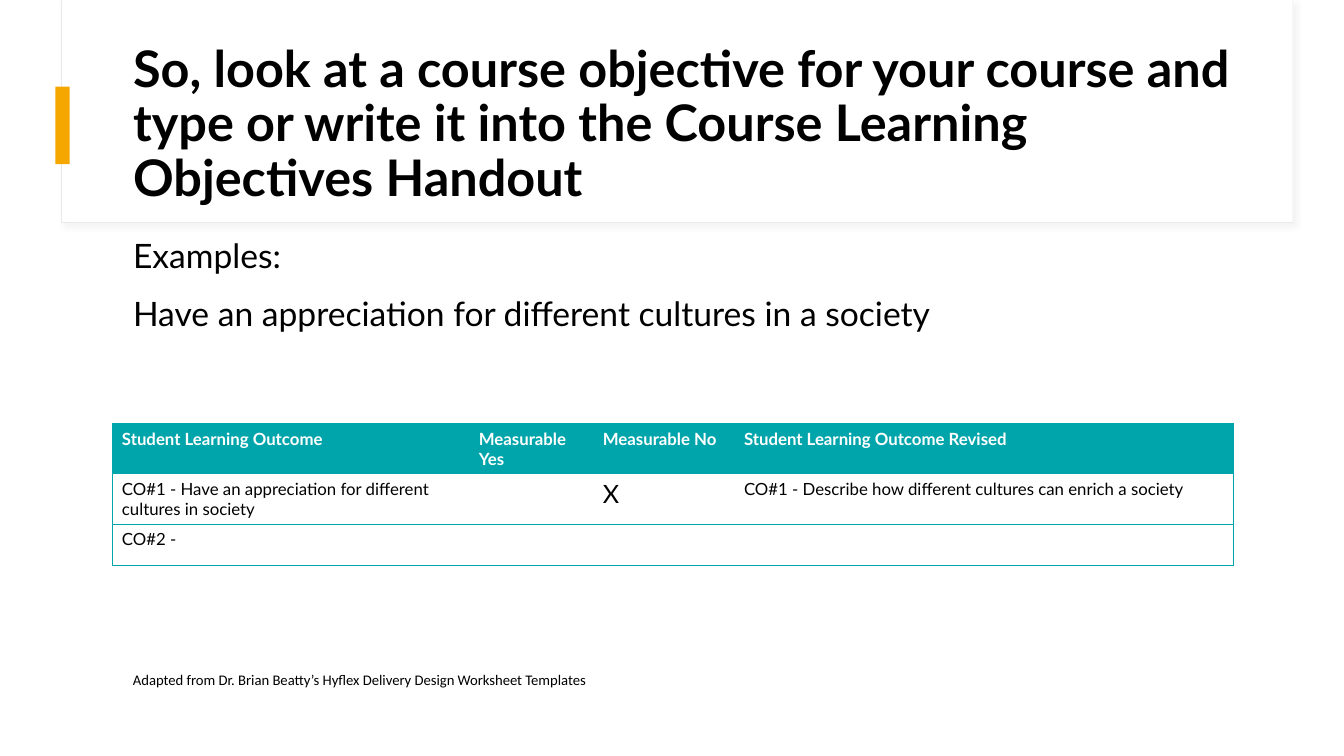
from lxml import etree
from pptx import Presentation
from pptx.dml.color import RGBColor
from pptx.enum.shapes import MSO_SHAPE
from pptx.enum.text import MSO_ANCHOR, MSO_AUTO_SIZE, PP_ALIGN
from pptx.oxml import parse_xml
from pptx.oxml.ns import nsdecls, qn
from pptx.util import Inches, Pt

RECTANGLE = MSO_SHAPE.RECTANGLE
MIDDLE, TOP = MSO_ANCHOR.MIDDLE, MSO_ANCHOR.TOP
LEFT = PP_ALIGN.LEFT
NO_AUTOFIT = MSO_AUTO_SIZE.NONE

BLACK, WHITE, TEAL, AMBER, GREY = "000000", "FFFFFF", "00A5AB", "F5A700", "E9E9E9"

HEADING = ("So, look at a course objective for your course and type or write it "
           "into the Course Learning Objectives Handout")
EXAMPLES = ["Examples:", "Have an appreciation for different cultures in a society"]
OUTCOMES = [
    ["Student Learning Outcome", "Measurable Yes", "Measurable No",
     "Student Learning Outcome Revised"],
    ["CO#1 - Have an appreciation for different cultures in society", "", "X",
     "CO#1 - Describe how different cultures can enrich a society"],
    ["CO#2 -", "", "", ""],
]
COLUMN_WIDTHS = [3.54, 1.23, 1.4, 4.95]
ROW_HEIGHTS = [0.5, 0.5, 0.41]
CREDIT = "Adapted from Dr. Brian Beatty’s Hyflex Delivery Design Worksheet Templates"


def rgb(value):
    return RGBColor.from_string(value)


def box(left, top, width, height):
    return [Inches(v) for v in (left, top, width, height)]


def place(shape, *area):
    shape.left, shape.top, shape.width, shape.height = box(*area)


def style(paragraph, size, font="Lato", color=BLACK, bold=False):
    paragraph.alignment = LEFT
    for run in paragraph.runs:
        run.font.name = font
        run.font.size = Pt(size)
        run.font.bold = bold
        run.font.color.rgb = rgb(color)


def add_panel(slide, area, fill, line=None):
    panel = slide.shapes.add_shape(RECTANGLE, *box(*area))
    panel.shadow.inherit = False
    panel.fill.solid()
    panel.fill.fore_color.rgb = rgb(fill)
    if line:
        panel.line.color.rgb = rgb(line)
        panel.line.width = Pt(0.75)
    else:
        panel.line.fill.background()
    return panel


def add_soft_shadow(shape):
    effects = shape.element.spPr.find(qn("a:effectLst"))
    effects.append(parse_xml(
        f'<a:outerShdw {nsdecls("a")} blurRad="{Pt(4)}" dist="{Pt(3)}" dir="2700000" '
        'algn="tl" rotWithShape="0"><a:srgbClr val="D9D9D9"><a:alpha val="30000"/>'
        '</a:srgbClr></a:outerShdw>'))


def set_borders(cell, visible):
    properties = cell._tc.get_or_add_tcPr()
    for position, side in enumerate("LRTB"):
        border = etree.Element(qn(f"a:ln{side}"), w=str(Pt(0.5)))
        if side in visible:
            fill = etree.SubElement(border, qn("a:solidFill"))
            etree.SubElement(fill, qn("a:srgbClr"), val=TEAL)
        else:
            etree.SubElement(border, qn("a:noFill"))
        properties.insert(position, border)


def add_outcomes(slide):
    area = box(1.11, 4.2, sum(COLUMN_WIDTHS), sum(ROW_HEIGHTS))
    table = slide.shapes.add_table(len(OUTCOMES), len(COLUMN_WIDTHS), *area).table
    table.first_row = table.horz_banding = False
    for column, width in zip(table.columns, COLUMN_WIDTHS):
        column.width = Inches(width)
    for row, height in zip(table.rows, ROW_HEIGHTS):
        row.height = Inches(height)
    last = len(COLUMN_WIDTHS) - 1
    for r, texts in enumerate(OUTCOMES):
        header = r == 0
        for c, text in enumerate(texts):
            cell = table.cell(r, c)
            if header:
                cell.fill.solid()
                cell.fill.fore_color.rgb = rgb(TEAL)
            else:
                cell.fill.background()
            set_borders(cell, "TB" + ("L" if c == 0 else "R" if c == last else ""))
            cell.text_frame.text = text
            style(cell.text_frame.paragraphs[0], 18 if text == "X" else 12,
                  color=WHITE if header else BLACK, bold=header)


def main():
    deck = Presentation()
    deck.slide_width, deck.slide_height = Inches(13.33), Inches(7.5)
    slide = deck.slides.add_slide(deck.slide_layouts[1])
    heading, examples = slide.shapes.title, slide.placeholders[1]

    add_soft_shadow(add_panel(slide, (0.61, 0, 12.21, 2.21), WHITE, GREY))
    add_panel(slide, (0.62, 0, 12.2, 2.2), WHITE)
    add_panel(slide, (0.55, 0.86, 0.14, 0.77), AMBER)
    for placeholder in (heading, examples):
        placeholder.element.getparent().append(placeholder.element)

    place(heading, 1.22, 0.6, 11.12, 1.29)
    heading.text_frame.text = HEADING
    heading.text_frame.auto_size = NO_AUTOFIT
    heading.text_frame.vertical_anchor = MIDDLE
    heading_line = heading.text_frame.paragraphs[0]
    heading_line.line_spacing = 0.9
    style(heading_line, 36, bold=True)

    place(examples, 1.22, 2.24, 11.12, 4.51)
    examples.text_frame.text = "\n".join(EXAMPLES)
    examples.text_frame.auto_size = NO_AUTOFIT
    examples.text_frame.vertical_anchor = TOP
    for paragraph in examples.text_frame.paragraphs:
        paragraph.line_spacing = 1.1
        paragraph.space_before = Pt(10)
        style(paragraph, 24)
        properties = paragraph._p.get_or_add_pPr()
        properties.set("marL", "0")
        properties.set("indent", "0")
        etree.SubElement(properties, qn("a:buNone"))

    add_outcomes(slide)

    credit = slide.shapes.add_textbox(*box(1.22, 6.61, 8.62, 0.58)).text_frame
    credit.word_wrap = True
    credit.text = CREDIT
    style(credit.paragraphs[0], 10.5, font="Calibri")

    deck.save("out.pptx")


if __name__ == "__main__":
    main()
